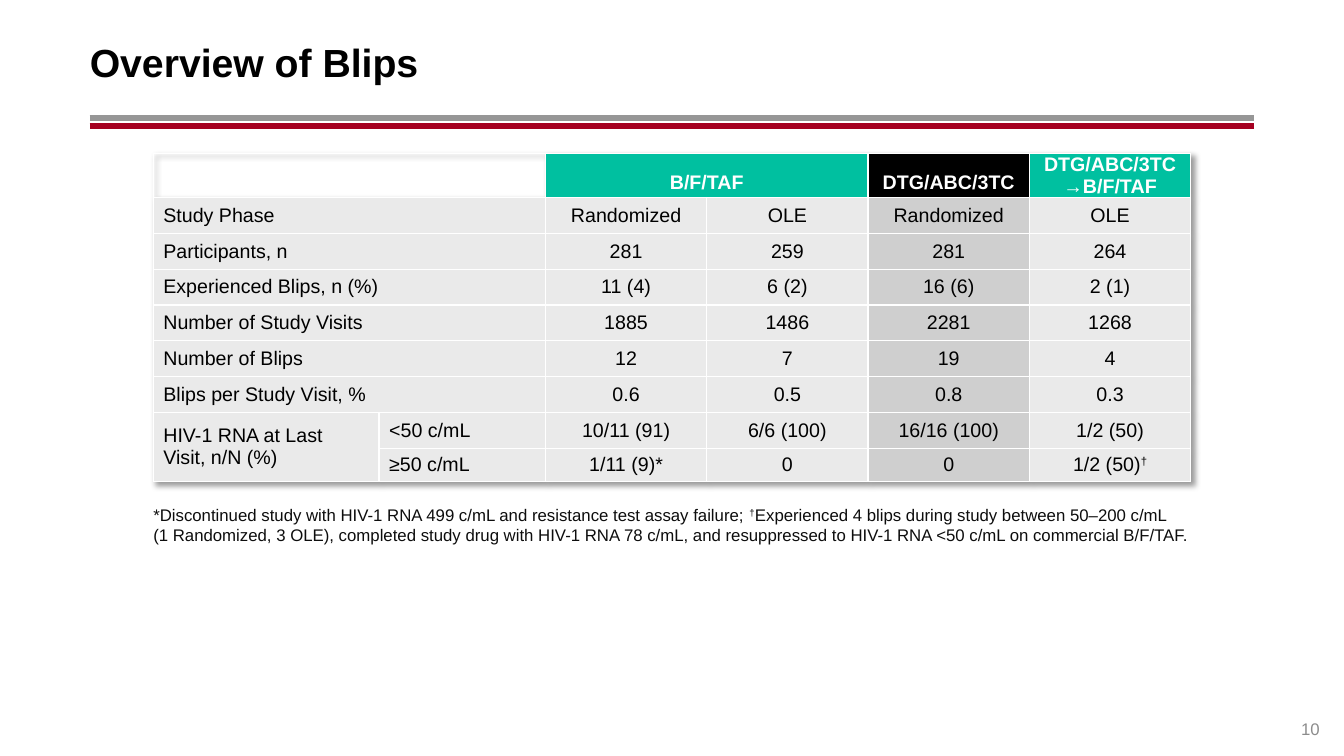
from lxml import etree
from pptx import Presentation, util as u
from pptx.dml.color import RGBColor
from pptx.enum import shapes, text
from pptx.oxml import parse_xml
from pptx.oxml.ns import qn

HEADING = "Overview of Blips"
DRUG_HEADERS = ["", "", "B/F/TAF", "", "DTG/ABC/3TC", "DTG/ABC/3TC →B/F/TAF"]
BLIP_ROWS = [
    ["Study Phase", "", "Randomized", "OLE", "Randomized", "OLE"],
    ["Participants, n", "", "281", "259", "281", "264"],
    ["Experienced Blips, n (%)", "", "11 (4)", "6 (2)", "16 (6)", "2 (1)"],
    ["Number of Study Visits", "", "1885", "1486", "2281", "1268"],
    ["Number of Blips", "", "12", "7", "19", "4"],
    ["Blips per Study Visit, %", "", "0.6", "0.5", "0.8", "0.3"],
    ["HIV-1 RNA at Last Visit, n/N (%)", "<50 c/mL", "10/11 (91)", "6/6 (100)", "16/16 (100)", "1/2 (50)"],
    ["", "≥50 c/mL", "1/11 (9)*", "0", "0", "1/2 (50)†"],
]
FOOTNOTES = [
    "*Discontinued study with HIV-1 RNA 499 c/mL and resistance test assay failure; "
    "†Experienced 4 blips during study between 50–200 c/mL",
    "(1 Randomized, 3 OLE), completed study drug with HIV-1 RNA 78 c/mL, "
    "and resuppressed to HIV-1 RNA <50 c/mL on commercial B/F/TAF.",
]
PAGE = "10"

COLORS = {"white": "FFFFFF", "black": "000000", "teal": "00C0A0", "light": "EAEAEA", "mid": "CFCFCF",
          "gray": "969696", "red": "A50021", "note": "0D0D0D", "page": "8C8C8C"}
HEADER_FILLS = [None, None, "teal", "teal", "black", "teal"]
ROW_FILLS = ["light"] * 4 + ["mid", "light"]
COLUMN_WIDTHS = [2.24, 1.65] + [1.6] * 4
HEADER_HEIGHT, LAST_HEIGHT, TABLE_HEIGHT = 0.44, 0.33, 3.26
LEFT, RIGHT, TABLE_LEFT, TABLE_TOP = 0.89, 12.44, 1.52, 1.52
A_NS = "http://schemas.openxmlformats.org/drawingml/2006/main"
LEFT_ALIGN, CENTER, RIGHT_ALIGN = text.PP_ALIGN.LEFT, text.PP_ALIGN.CENTER, text.PP_ALIGN.RIGHT
MIDDLE, BOTTOM = text.MSO_ANCHOR.MIDDLE, text.MSO_ANCHOR.BOTTOM


def color(name):
    return RGBColor.from_string(COLORS[name])


def put_text(frame, lines, size=14, ink="black", bold=False, align=LEFT_ALIGN):
    for index, line in enumerate(lines):
        paragraph = frame.paragraphs[0] if index == 0 else frame.add_paragraph()
        paragraph.alignment = align
        paragraph.space_before = u.Pt(0)
        before, dagger, after = line.partition("†")
        for part in filter(None, (before, dagger, after)):
            run = paragraph.add_run()
            run.text = part
            run.font.size, run.font.bold, run.font.name = u.Pt(size), bold, "Arial"
            run.font.color.rgb = color(ink)
            if part == "†":
                run.font._element.set("baseline", "30000")


def place(shape, left, top, width, height, anchor, right_inset=0, vertical_inset=0):
    shape.left, shape.top, shape.width, shape.height = map(u.Inches, (left, top, width, height))
    frame = shape.text_frame
    frame.word_wrap, frame.auto_size, frame.vertical_anchor = True, text.MSO_AUTO_SIZE.NONE, anchor
    frame.margin_left, frame.margin_right = 0, u.Inches(right_inset)
    frame.margin_top = frame.margin_bottom = u.Inches(vertical_inset)
    return frame


def add_rule(slide, y, ink):
    rule = slide.shapes.add_connector(shapes.MSO_CONNECTOR.STRAIGHT, u.Inches(LEFT), u.Inches(y),
                                      u.Inches(RIGHT), u.Inches(y))
    rule.line.color.rgb, rule.line.width = color(ink), u.Pt(4.25)
    etree.SubElement(rule._element.spPr, qn("a:effectLst"))


def add_borders(cell):
    properties = cell._tc.get_or_add_tcPr()
    for index, side in enumerate("LRTB"):
        properties.insert(index, parse_xml(
            f'<a:ln{side} xmlns:a="{A_NS}" w="12700"><a:solidFill>'
            f'<a:srgbClr val="{COLORS["white"]}"/></a:solidFill></a:ln{side}>'))


def add_blip_table(slide):
    rows = [DRUG_HEADERS] + BLIP_ROWS
    table = slide.shapes.add_table(len(rows), len(COLUMN_WIDTHS), u.Inches(TABLE_LEFT), u.Inches(TABLE_TOP),
                                   u.Inches(sum(COLUMN_WIDTHS)), u.Inches(TABLE_HEIGHT)).table
    table.first_row = table.horz_banding = False
    table._tbl.tblPr.insert(0, parse_xml(
        f'<a:effectLst xmlns:a="{A_NS}"><a:outerShdw blurRad="50800" dist="38100" dir="2700000" algn="tl">'
        f'<a:srgbClr val="{COLORS["black"]}"><a:alpha val="40000"/></a:srgbClr></a:outerShdw></a:effectLst>'))
    for column, width in zip(table.columns, COLUMN_WIDTHS):
        column.width = u.Inches(width)
    row_height = (TABLE_HEIGHT - HEADER_HEIGHT - LAST_HEIGHT) / (len(rows) - 2)
    heights = [HEADER_HEIGHT] + [row_height] * (len(rows) - 2) + [LAST_HEIGHT]
    for r, (values, height) in enumerate(zip(rows, heights)):
        table.rows[r].height = u.Inches(height)
        header = r == 0
        for c, value in enumerate(values):
            cell = table.cell(r, c)
            fill = (HEADER_FILLS if header else ROW_FILLS)[c]
            if fill:
                cell.fill.solid()
                cell.fill.fore_color.rgb = color(fill)
                add_borders(cell)
            else:
                cell.fill.background()
            cell.margin_left = cell.margin_right = u.Inches(0.1)
            cell.margin_top = cell.margin_bottom = 0
            if header and c < 5:
                cell.margin_bottom = u.Inches(0.04)
            cell.vertical_anchor = BOTTOM if header else MIDDLE
            put_text(cell.text_frame, [value], ink="white" if header else "black", bold=header,
                     align=CENTER if c > 1 else LEFT_ALIGN)
    for r in range(len(rows) - 2):
        table.cell(r, 0).merge(table.cell(r, 1))
    table.cell(0, 2).merge(table.cell(0, 3))
    table.cell(len(rows) - 2, 0).merge(table.cell(len(rows) - 1, 0))


def main():
    deck = Presentation()
    deck.slide_width, deck.slide_height = u.Inches(13.33), u.Inches(7.5)
    slide = deck.slides.add_slide(deck.slide_layouts[1])
    add_rule(slide, 1.17, "gray")
    add_rule(slide, 1.25, "red")

    heading = slide.shapes.title
    heading.fill.solid()
    heading.fill.fore_color.rgb = color("white")
    put_text(place(heading, LEFT, 0.18, RIGHT - LEFT, 0.86, MIDDLE, 0.1, 0.05), [HEADING], size=28, bold=True)

    footnote = place(slide.placeholders[1], TABLE_LEFT, 4.94, 10.42, 0.47, BOTTOM)
    put_text(footnote, FOOTNOTES, size=12, ink="note")
    for paragraph in footnote.paragraphs:
        properties = paragraph._p.get_or_add_pPr()
        properties.set("marL", "0")
        properties.set("indent", "0")
        etree.SubElement(properties, qn("a:buNone"))

    page = slide.shapes.add_textbox(0, 0, 0, 0)
    put_text(place(page, RIGHT, 6.93, 0.65, 0.4, BOTTOM), [PAGE], size=12, ink="page", align=RIGHT_ALIGN)
    add_blip_table(slide)
    deck.save("out.pptx")


if __name__ == "__main__":
    main()
